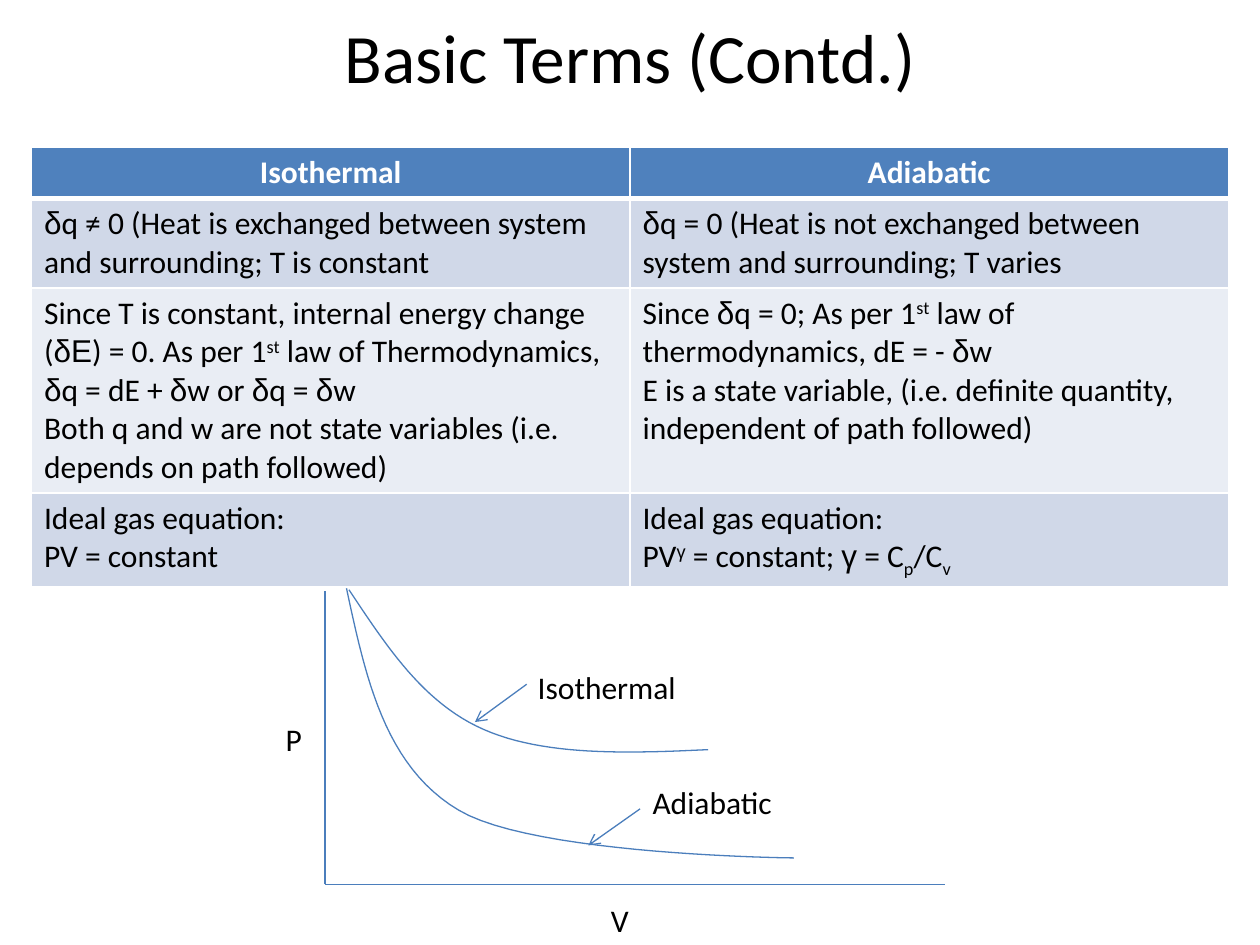
"""Build a slide comparing isothermal and adiabatic processes, with a P-V diagram."""
from dataclasses import dataclass
from itertools import groupby

from lxml.etree import SubElement
from pptx import Presentation
from pptx.dml.color import RGBColor
from pptx.enum.shapes import MSO_CONNECTOR
from pptx.enum.text import MSO_ANCHOR, MSO_AUTO_SIZE, PP_ALIGN
from pptx.oxml.ns import qn
from pptx.util import Pt


@dataclass(frozen=True)
class Theme:
    font: str = "Calibri"
    greek_font: str = "Arial"
    title_size: float = 39.6
    body_size: float = 18
    line_width: float = 0.75
    text: str = "000000"
    white: str = "FFFFFF"
    header: str = "4F81BD"
    bands: tuple = ("D0D8E8", "E9EDF4")
    line: str = "4B7EBC"


THEME = Theme()
GREEK = "δΕγ"
SUPER, SUB = 30, -25
TITLE = "Basic Terms (Contd.)"
HEADERS = ("Isothermal", "Adiabatic")
ROWS = [
    (
        [["δq ≠ 0 (Heat is exchanged between system and surrounding; T is constant"]],
        [["δq = 0 (Heat is not exchanged between system and surrounding; T varies"]],
    ),
    (
        [["Since T is constant, internal energy change (δΕ) = 0. As per 1", ("st", SUPER),
          " law of Thermodynamics, δq = dE + δw or δq = δw"],
         ["Both q and w are not state variables (i.e. depends on path followed)"]],
        [["Since δq = 0; As per 1", ("st", SUPER), " law of thermodynamics, dE = - δw"],
         ["E is a state variable, (i.e. definite quantity, independent of path followed)"]],
    ),
    (
        [["Ideal gas equation:"], ["PV = constant"]],
        [["Ideal gas equation:"],
         ["PV", ("γ", SUPER), " = constant; γ = C", ("p", SUB), "/C", ("v", SUB)]],
    ),
]
TITLE_BOX = (36, 21.6, 648, 20.2)
TABLE_BOX = (18, 84.2, 684, 244.8)
ROW_HEIGHTS = (24.5, 46, 98.6, 46)
ORIGIN = (185.8, 505.4)
AXIS_ENDS = [(185.8, 337.7), (540, 505.4)]
CURVES = [
    [(199.4, 337), (221, 369.4), (241.9, 401.8), (276.5, 416.9),
     (311, 432), (357.8, 430.6), (404.6, 428.4)],
    [(198, 336.2), (208.8, 386.6), (219.6, 437.8), (262.1, 463),
     (305.3, 488.9), (453.6, 490.3), (453.6, 490.3)],
]
LABELS = [
    ("P", (156.2, 408.2, 23.8, 28.8)),
    ("V", (342, 511.2, 25.2, 28.8)),
    ("Isothermal", (300.2, 378, 94.3, 28.8)),
    ("Adiabatic", (365.8, 444.2, 83.5, 28.8)),
]
POINTERS = [((301, 391), (271.4, 412.6)), ((365.8, 462.2), (336.2, 483.1))]


def points(values):
    return [Pt(value) for value in values]


def style_span(span, color, size=THEME.body_size, bold=False, font=THEME.font):
    span.font.name = font
    span.font.size = Pt(size)
    span.font.bold = bold
    span.font.color.rgb = RGBColor.from_string(color)


def write_paragraph(para, pieces, color, bold=False):
    for piece in pieces:
        text, baseline = (piece, 0) if isinstance(piece, str) else piece
        for is_greek, letters in groupby(text, lambda letter: letter in GREEK):
            span = para.add_run()
            span.text = "".join(letters)
            style_span(span, color, bold=bold, font=THEME.greek_font if is_greek else THEME.font)
            if baseline:
                span.font._element.set("baseline", str(baseline * 1000))


def format_cell(cell, fill, top, bottom):
    properties = cell._tc.get_or_add_tcPr()
    for side, width in (("L", 1), ("R", 1), ("T", top), ("B", bottom)):
        border = SubElement(properties, qn(f"a:ln{side}"), w=str(Pt(width)))
        SubElement(SubElement(border, qn("a:solidFill")), qn("a:srgbClr"), val=THEME.white)
    cell.fill.solid()
    cell.fill.fore_color.rgb = RGBColor.from_string(fill)


def add_comparison(page):
    frame = page.shapes.add_table(len(ROWS) + 1, len(HEADERS), *points(TABLE_BOX))
    table = frame.table
    for row, height in zip(table.rows, ROW_HEIGHTS):
        row.height = Pt(height)
    frame.height = Pt(TABLE_BOX[3])
    for column, heading in enumerate(HEADERS):
        cell = table.cell(0, column)
        format_cell(cell, THEME.header, 1, 3)
        para = cell.text_frame.paragraphs[0]
        para.alignment = PP_ALIGN.CENTER
        write_paragraph(para, [heading], THEME.white, bold=True)
    for number, row in enumerate(ROWS, 1):
        for column, paragraphs in enumerate(row):
            cell = table.cell(number, column)
            format_cell(cell, THEME.bands[(number - 1) % 2], 3 if number == 1 else 1, 1)
            for index, pieces in enumerate(paragraphs):
                text = cell.text_frame
                para = text.add_paragraph() if index else text.paragraphs[0]
                write_paragraph(para, pieces, THEME.text)


def style_line(shape):
    shape.line.color.rgb = RGBColor.from_string(THEME.line)
    shape.line.width = Pt(THEME.line_width)


def add_line(shapes, start, end, arrow=False):
    line = shapes.add_connector(MSO_CONNECTOR.STRAIGHT, *points(start + end))
    style_line(line)
    if arrow:
        SubElement(line.line._get_or_add_ln(), qn("a:tailEnd"), type="arrow")
    SubElement(line._element.spPr, qn("a:effectLst"))


def bezier(controls, steps=24):
    for step in range(1, steps + 1):
        t = step / steps
        weights = ((1 - t) ** 3, 3 * t * (1 - t) ** 2, 3 * t * t * (1 - t), t ** 3)
        yield tuple(Pt(sum(weight * control[axis] for weight, control in zip(weights, controls)))
                    for axis in (0, 1))


def add_curve(shapes, controls):
    builder = shapes.build_freeform(*points(controls[0]))
    for first in range(0, len(controls) - 1, 3):
        builder.add_line_segments(bezier(controls[first:first + 4]), close=False)
    curve = builder.convert_to_shape()
    curve.fill.background()
    curve.shadow.inherit = False
    style_line(curve)


def add_diagram(page):
    group = page.shapes.add_group_shape()
    for end in AXIS_ENDS:
        add_line(group.shapes, ORIGIN, end)
    for controls in CURVES:
        add_curve(group.shapes, controls)
    for label, place in LABELS:
        box = page.shapes.add_textbox(*points(place))
        box.text_frame.word_wrap = False
        box.text_frame.auto_size = MSO_AUTO_SIZE.SHAPE_TO_FIT_TEXT
        write_paragraph(box.text_frame.paragraphs[0], [label], THEME.text)
    for start, end in POINTERS:
        add_line(page.shapes, start, end, arrow=True)


def main():
    deck = Presentation()
    deck.slide_width, deck.slide_height = Pt(720), Pt(540)
    page = deck.slides.add_slide(deck.slide_layouts[5])
    title = page.shapes.title
    title.left, title.top, title.width, title.height = points(TITLE_BOX)
    title.text_frame.text = TITLE
    title.text_frame.auto_size = MSO_AUTO_SIZE.NONE
    title.text_frame.vertical_anchor = MSO_ANCHOR.MIDDLE
    para = title.text_frame.paragraphs[0]
    para.alignment = PP_ALIGN.CENTER
    style_span(para.runs[0], THEME.text, THEME.title_size)
    add_comparison(page)
    add_diagram(page)
    deck.save("out.pptx")


if __name__ == "__main__":
    main()
